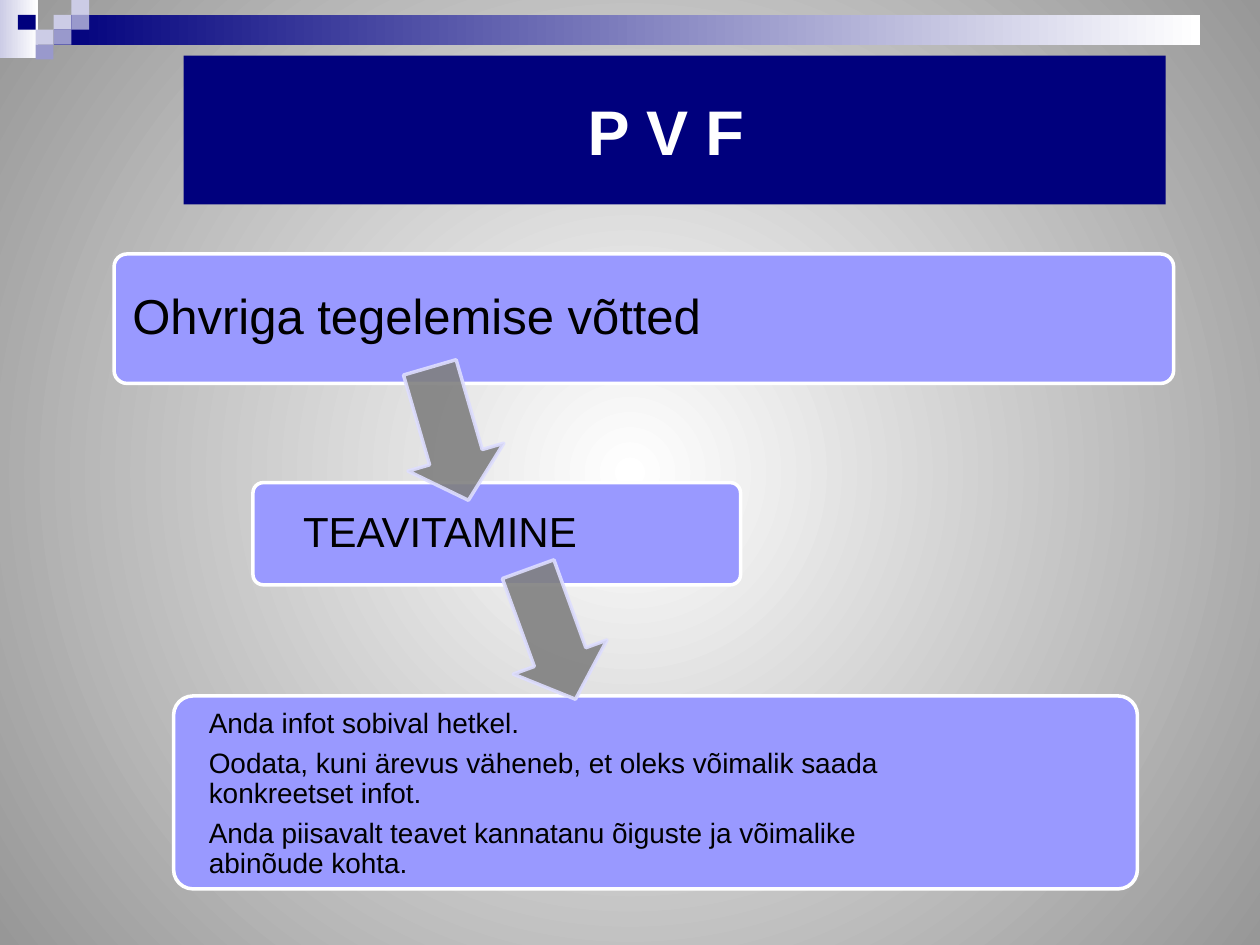
from dataclasses import dataclass
from lxml import etree
from pptx import Presentation
from pptx.dml.color import RGBColor
from pptx.enum import shapes, text
from pptx.oxml.ns import qn
from pptx.util import Cm, Pt


@dataclass(frozen=True)
class Theme:
    font: str = "Arial"
    navy: str = "00007D"
    mist: str = "CCCCE6"
    lilac: str = "9999CC"
    box: str = "9999FF"
    arrow: str = "808080"
    edge: str = "DEDEFF"
    white: str = "FFFFFF"
    grey: str = "979797"
    black: str = "000000"
    title: int = 36
    head: int = 28
    step: int = 24
    body: int = 16
    line: int = 2
    alpha: int = 90


def rgb(code):
    return RGBColor.from_string(code)


def blend(fill, codes):
    fill.gradient()
    for stop, code, pos in zip(fill.gradient_stops, codes, (0, 1)):
        stop.color.rgb = rgb(code)
        stop.position = pos


def write(frame, words, font, size, color, bold=False, align=text.PP_ALIGN.LEFT,
          pad=None, inset=0, lead=None, after=None):
    frame.word_wrap = True
    frame.vertical_anchor = text.MSO_ANCHOR.MIDDLE
    if pad is not None:
        frame.margin_left, frame.margin_right = Cm(pad + inset), Cm(pad)
        frame.margin_top = frame.margin_bottom = Cm(pad)
    for i, line in enumerate(words):
        para = frame.add_paragraph() if i else frame.paragraphs[0]
        para.alignment = align
        if lead:
            para.line_spacing = lead
        if after:
            para.space_after = Pt(after)
        run = para.add_run()
        run.text = line
        run.font.name, run.font.size, run.font.bold = font, Pt(size), bold
        run.font.color.rgb = rgb(color)


class Page:
    def __init__(self, deck, theme):
        self.theme = theme
        self.slide = deck.slides.add_slide(deck.slide_layouts[5])

    def glow(self, inner, outer):
        blend(self.slide.background.fill, (inner, outer))
        lin = next(self.slide.element.iter(qn("a:lin")))
        ring = etree.Element(qn("a:path"), path="circle")
        etree.SubElement(ring, qn("a:fillToRect"),
                         {side: "50000" for side in "ltrb"})
        lin.getparent().replace(lin, ring)

    def shape(self, kind, place, fill, line=None, adj=()):
        item = self.slide.shapes.add_shape(kind, *map(Cm, place))
        item.shadow.inherit = False
        if isinstance(fill, tuple):
            blend(item.fill, fill)
            item.fill.gradient_angle = 0
        else:
            item.fill.solid()
            item.fill.fore_color.rgb = rgb(fill)
        if line:
            item.line.color.rgb = rgb(line)
            item.line.width = Pt(self.theme.line)
        else:
            item.line.fill.background()
        for i, value in enumerate(adj):
            item.adjustments[i] = value
        return item

    def rect(self, place, fill):
        return self.shape(shapes.MSO_SHAPE.RECTANGLE, place, fill)

    def title(self, place, words):
        t, item = self.theme, self.slide.shapes.title
        item.left, item.top, item.width, item.height = map(Cm, place)
        item.fill.solid()
        item.fill.fore_color.rgb = rgb(t.navy)
        write(item.text_frame, [words], t.font, t.title, t.white, bold=True,
              align=text.PP_ALIGN.CENTER)

    def card(self, place, inner, words, size, pad, inset=0,
             align=text.PP_ALIGN.LEFT):
        t = self.theme
        self.shape(shapes.MSO_SHAPE.ROUNDED_RECTANGLE, place, t.box, t.white, [0.1])
        note = self.slide.shapes.add_textbox(*map(Cm, inner))
        write(note.text_frame, words, t.font, size, t.black, align=align,
              pad=pad, inset=inset, lead=0.9, after=round(size * 0.35, 1))

    def arrow(self, left, top, turn):
        t = self.theme
        item = self.shape(shapes.MSO_SHAPE.DOWN_ARROW, (left, top, 2.01, 2.79),
                          t.arrow, t.edge, [0.55, 0.45])
        item.rotation = turn
        for color in item.element.spPr.iter(qn("a:srgbClr")):
            etree.SubElement(color, qn("a:alpha"), val=str(t.alpha * 1000))


def main():
    deck = Presentation()
    deck.slide_width, deck.slide_height = Cm(25.4), Cm(19.05)
    t = Theme()
    page = Page(deck, t)
    page.glow(t.white, t.grey)

    wide, high = 0.36, 0.3
    page.rect((0, 0, 0.76, 1.17), (t.mist, t.white))
    page.rect((3 * wide, high, 23.11, 2 * high), (t.navy, t.white))
    tiles = [(3, 1, t.mist), (4, 0, t.mist), (4, 1, t.lilac), (2, 2, t.mist),
             (1, 1, t.navy), (3, 2, t.lilac), (2, 3, t.lilac)]
    for col, row, color in tiles:
        page.rect((col * wide, row * high, wide, high), color)

    page.title((3.7, 1.12, 19.8, 3), "P V F ")
    page.card((2.3, 5.12, 21.36, 2.61), (2.37, 5.19, 16.41, 2.46),
              ["Ohvriga tegelemise võtted"], t.head, 0.3)
    page.card((5.1, 9.73, 9.83, 2.06), (5.16, 9.78, 7.42, 1.96),
              ["TEAVITAMINE"], t.step, 0.25, align=text.PP_ALIGN.CENTER)
    page.card((3.5, 14.03, 19.43, 3.89), (3.61, 14.19, 14.71, 3.66),
              ["Anda infot sobival hetkel.",
               "Oodata, kuni ärevus väheneb, et oleks võimalik saada konkreetset infot.",
               "Anda piisavalt teavet kannatanu õiguste ja võimalike abinõude kohta."],
              t.body, 0.18, inset=0.42)
    page.arrow(8.05, 7.35, 343.8)
    page.arrow(10.12, 11.39, 340)
    deck.save("out.pptx")


if __name__ == "__main__":
    main()
